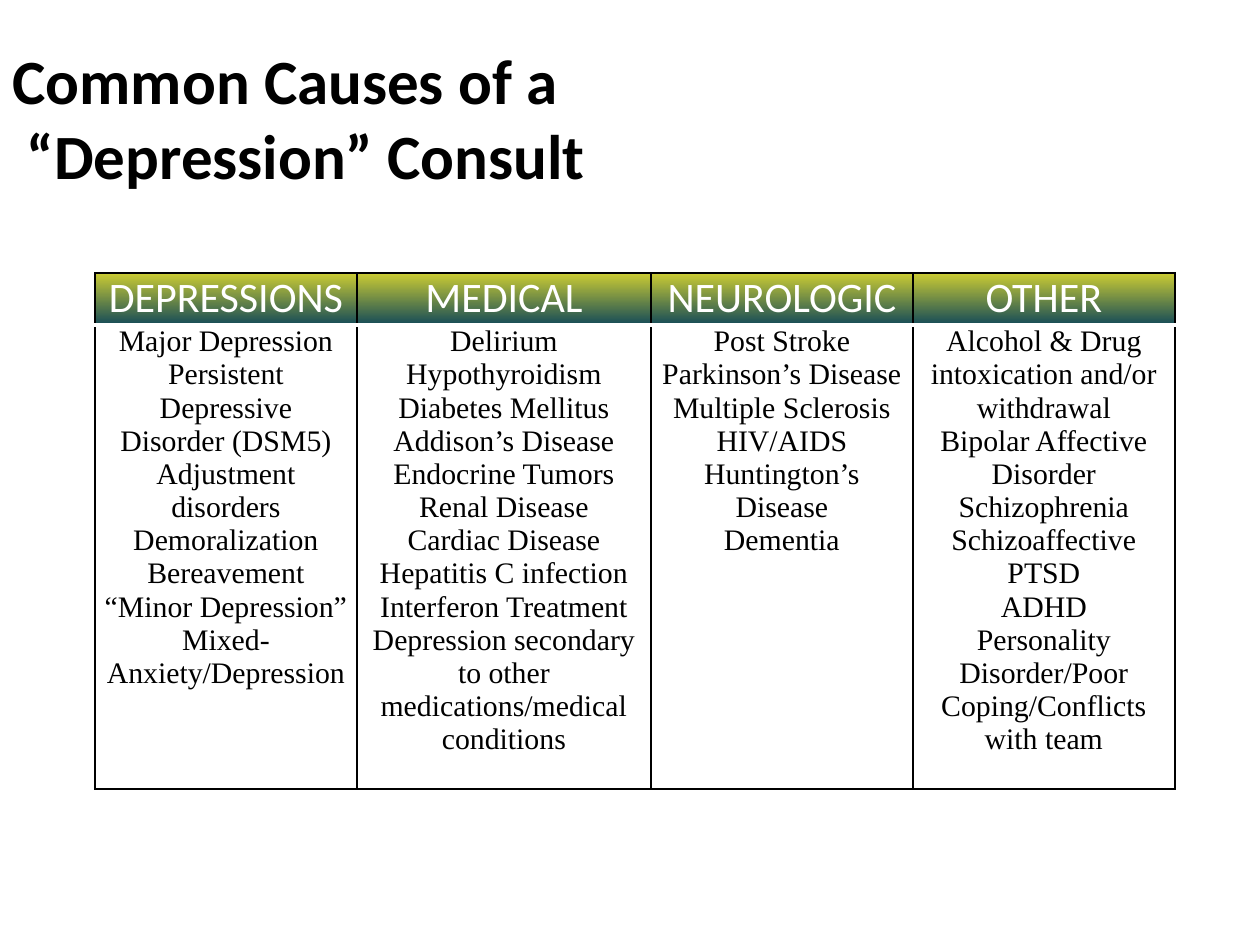
"""Build a slide with a four-column table of common causes of a depression consult."""
from lxml import etree
from pptx import Presentation
from pptx.dml.color import RGBColor
from pptx.enum.text import MSO_ANCHOR, PP_ALIGN
from pptx.oxml.ns import qn
from pptx.util import Emu, Pt

CENTER, LEFT = PP_ALIGN.CENTER, PP_ALIGN.LEFT
MIDDLE, TOP = MSO_ANCHOR.MIDDLE, MSO_ANCHOR.TOP
BLACK, WHITE = "000000", "FFFFFF"
SHADES = ["CCCC33", "154B58"]
WIDTHS = [262, 294, 262, 262]
HEIGHTS = [52, 464]
CAUSES = {
    "DEPRESSIONS": [
        "Major Depression", "Persistent Depressive", "Disorder (DSM5)",
        "Adjustment disorders", "Demoralization", "Bereavement",
        "“Minor Depression”", "Mixed- Anxiety/Depression"],
    "MEDICAL": [
        "Delirium", "Hypothyroidism", "Diabetes Mellitus", "Addison’s Disease",
        "Endocrine Tumors", "Renal Disease", "Cardiac Disease",
        "Hepatitis C infection Interferon Treatment",
        "Depression secondary to other medications/medical conditions"],
    "NEUROLOGIC": [
        "Post Stroke", "Parkinson’s Disease", "Multiple Sclerosis", "HIV/AIDS",
        "Huntington’s Disease", "Dementia"],
    "OTHER": [
        "Alcohol & Drug intoxication and/or withdrawal",
        "Bipolar Affective Disorder", "Schizophrenia", "Schizoaffective",
        "PTSD", "ADHD", "Personality Disorder/Poor Coping/Conflicts with team"],
}


def px(n):
    return Emu(round(n * 914400 / 126))


def style(para, face, size, color, bold, align):
    para.alignment = align
    for run in para.runs:
        font = run.font
        font.name, font.size, font.bold = face, Pt(size), bold
        font.color.rgb = RGBColor.from_string(color)


deck = Presentation()
deck.slide_width, deck.slide_height = px(1260), px(945)
slide = deck.slides.add_slide(deck.slide_layouts[5])

title = slide.shapes.title
title.left, title.top, title.width, title.height = px(0), px(38), px(1134), px(158)
title.text_frame.text = "Common Causes of a\v “Depression” Consult"
title.text_frame.vertical_anchor = MIDDLE
style(title.text_frame.paragraphs[0], "Calibri", 36, BLACK, True, LEFT)

table = slide.shapes.add_table(
    2, 4, px(95), px(273), px(sum(WIDTHS)), px(sum(HEIGHTS))).table
for col, width in zip(table.columns, WIDTHS):
    col.width = px(width)
for row, height in zip(table.rows, HEIGHTS):
    row.height = px(height)

for c, (head, items) in enumerate(CAUSES.items()):
    for r, lines in enumerate([[head], items]):
        cell = table.cell(r, c)
        cell.margin_left = cell.margin_right = px(9)
        cell.margin_top = cell.margin_bottom = 0
        cell.vertical_anchor = TOP
        cell.text_frame.text = "\n".join(lines)
        face, size, color = [("Calibri", 24, WHITE), ("Times New Roman", 17, BLACK)][r]
        for para in cell.text_frame.paragraphs:
            style(para, face, size, color, False, CENTER)

        props = cell._tc.get_or_add_tcPr()
        split = "TB"[r == 0]
        for side in "LRTB":
            tone, wide = (WHITE, 3) if side == split else (BLACK, 1)
            line = etree.SubElement(props, qn("a:ln" + side), w=str(Pt(wide)))
            solid = etree.SubElement(line, qn("a:solidFill"))
            etree.SubElement(solid, qn("a:srgbClr"), val=tone)

        if r == 0:
            cell.fill.gradient()
            cell.fill.gradient_angle = 270
            for stop, shade in zip(cell.fill.gradient_stops, SHADES):
                stop.color.rgb = RGBColor.from_string(shade)
        else:
            cell.fill.solid()
            cell.fill.fore_color.rgb = RGBColor.from_string(WHITE)
            tint = props.find(qn("a:solidFill")).find(qn("a:srgbClr"))
            etree.SubElement(tint, qn("a:alpha"), val="50000")

deck.save("out.pptx")
